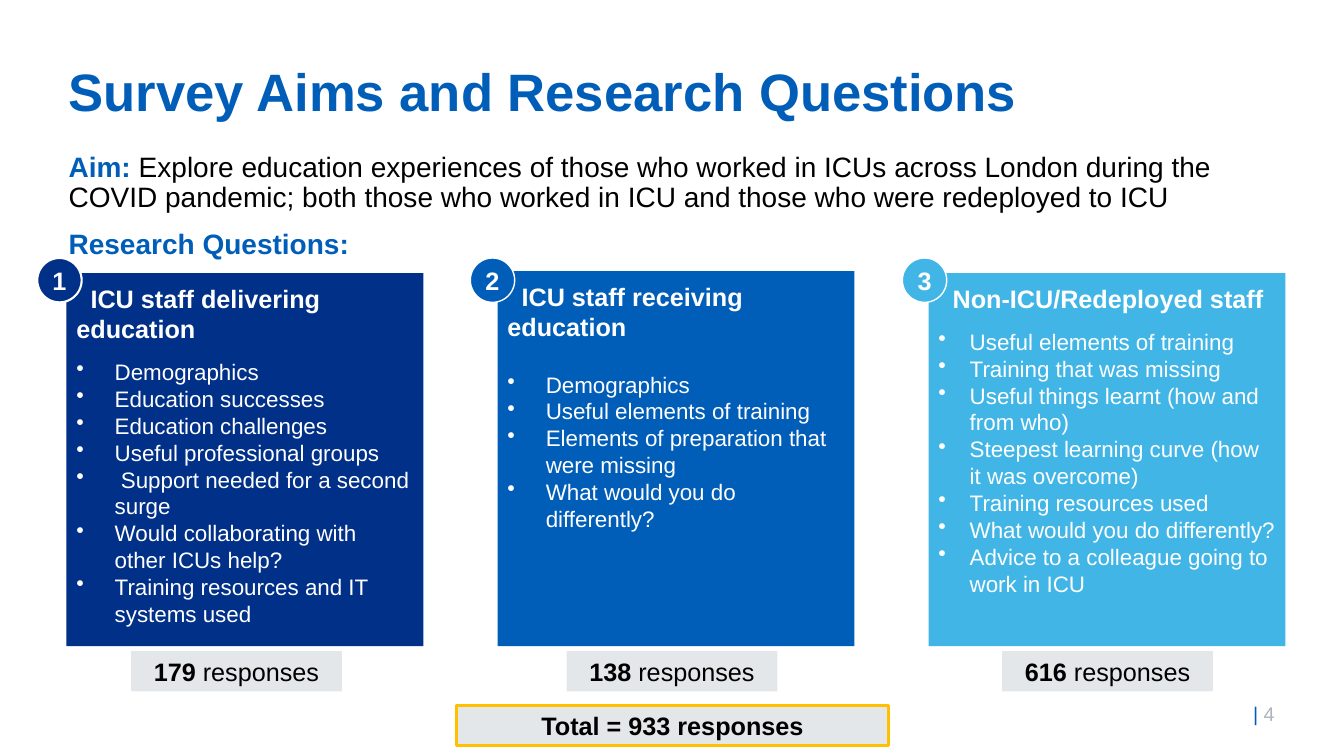
from lxml import etree
from pptx import Presentation
from pptx.dml.color import RGBColor
from pptx.enum.shapes import MSO_SHAPE
from pptx.enum.text import MSO_ANCHOR, MSO_AUTO_SIZE, PP_ALIGN
from pptx.oxml.ns import qn
from pptx.util import Inches, Pt

RECTANGLE, OVAL = MSO_SHAPE.RECTANGLE, MSO_SHAPE.OVAL
LEFT, CENTER = PP_ALIGN.LEFT, PP_ALIGN.CENTER
TOP, MIDDLE, BOTTOM = MSO_ANCHOR.TOP, MSO_ANCHOR.MIDDLE, MSO_ANCHOR.BOTTOM

NAVY, BLUE, SKY = "003087", "005EB8", "41B6E6"
WHITE, BLACK, PALE, GREY, GOLD = "FFFFFF", "000000", "E4E7E9", "ADB6BE", "FFC000"

CARD_WIDTH, CARD_BOTTOM = 3.54, 6.41
CARD_LEFT, CARD_PITCH = 0.66, 4.275
RESPONSE_LEFT, RESPONSE_PITCH = 1.3, 4.32

GROUPS = [
    dict(heading="ICU staff delivering education", color=NAVY, top=2.71, gap=10.35,
         indent=0.38, badge_offset=0.29, badge_line=1.5, responses="179", topics=[
             "Demographics", "Education successes", "Education challenges",
             "Useful professional groups", " Support needed for a second surge",
             "Would collaborating with other ICUs help?",
             "Training resources and IT systems used"]),
    dict(heading="ICU staff receiving education", color=BLUE, top=2.69, gap=20.7,
         indent=0.38, badge_offset=0.27, badge_line=1, responses="138", topics=[
             "Demographics", "Useful elements of training",
             "Elements of preparation that were missing",
             "What would you do differently?"]),
    dict(heading="Non-ICU/Redeployed staff", color=SKY, top=2.71, gap=10.35,
         indent=0.31, badge_offset=0.26, badge_line=1, responses="616", topics=[
             "Useful elements of training", "Training that was missing",
             "Useful things learnt (how and from who)",
             "Steepest learning curve (how it was overcome)",
             "Training resources used", "What would you do differently?",
             "Advice to a colleague going to work in ICU"]),
]


def rgb(color):
    return RGBColor.from_string(color)


def place(shape, box):
    shape.left, shape.top, shape.width, shape.height = map(Inches, box)


def prepare_frame(shape, anchor):
    frame = shape.text_frame
    frame.word_wrap = True
    frame.auto_size = MSO_AUTO_SIZE.NONE
    frame.vertical_anchor = anchor
    return frame


def write(paragraph, *runs, size=18, color=BLACK, bold=False, align=LEFT, bullet=None,
          margin=0, indent=0, before=0, after=0, spacing=1.0):
    """Fill a paragraph; each run is a string or (string, overrides of color and bold)."""
    properties = paragraph._p.get_or_add_pPr()
    properties.set("marL", str(Inches(margin)))
    properties.set("indent", str(Inches(indent)))
    if bullet:
        etree.SubElement(properties, qn("a:buChar")).set("char", bullet)
    else:
        etree.SubElement(properties, qn("a:buNone"))
    paragraph.alignment = align
    paragraph.space_before, paragraph.space_after = Pt(before), Pt(after)
    paragraph.line_spacing = spacing
    for item in runs:
        text, changes = (item, {}) if isinstance(item, str) else item
        run = paragraph.add_run()
        run.text = text
        run.font.name, run.font.size = "Arial", Pt(size)
        run.font.bold = changes.get("bold", bold)
        run.font.color.rgb = rgb(changes.get("color", color))


def add_block(slide, kind, box, fill, line=None, line_width=1):
    block = slide.shapes.add_shape(kind, *map(Inches, box))
    block.shadow.inherit = False
    block.fill.solid()
    block.fill.fore_color.rgb = rgb(fill)
    if line:
        block.line.color.rgb = rgb(line)
        block.line.width = Pt(line_width)
    else:
        block.line.fill.background()
    return block


def fill_title(slide, box):
    title = slide.shapes.title
    place(title, box)
    frame = prepare_frame(title, BOTTOM)
    write(frame.paragraphs[0], "Survey Aims and Research Questions",
          size=37.6, color=BLUE, bold=True, spacing=0.9)


def fill_aim(slide, box):
    body = slide.placeholders[1]
    place(body, box)
    frame = prepare_frame(body, TOP)
    label = dict(color=BLUE, bold=True)
    write(frame.paragraphs[0], ("Aim: ", label),
          "Explore education experiences of those who worked in ICUs across London during "
          "the COVID pandemic; both those who worked in ICU and those who were redeployed "
          "to ICU", size=20, after=12, spacing=0.9)
    write(frame.add_paragraph(), ("Research Questions:", label),
          size=20, after=12, spacing=0.9)


def add_card(slide, box, group):
    card = add_block(slide, RECTANGLE, box, group["color"])
    frame = prepare_frame(card, TOP)
    frame.margin_top = frame.margin_bottom = Inches(0.1)
    write(frame.paragraphs[0], group["heading"], color=WHITE, bold=True, indent=0.14)
    for position, topic in enumerate(group["topics"]):
        write(frame.add_paragraph(), topic, size=16, color=WHITE, bullet="•",
              margin=group["indent"], indent=-group["indent"],
              before=0 if position else group["gap"])


def add_badge(slide, box, number, group):
    badge = add_block(slide, OVAL, box, group["color"], WHITE, group["badge_line"])
    frame = prepare_frame(badge, MIDDLE)
    frame.margin_left = frame.margin_right = 0
    write(frame.paragraphs[0], str(number), color=WHITE, bold=True, align=CENTER)


def add_count(slide, box, *runs, **outline):
    count = add_block(slide, RECTANGLE, box, PALE, **outline)
    write(prepare_frame(count, TOP).paragraphs[0], *runs, align=CENTER)


def add_page_number(slide, box):
    page = slide.shapes.add_textbox(*map(Inches, box))
    write(prepare_frame(page, TOP).paragraphs[0], ("| ", dict(color=BLUE)), "4",
          size=14.1, color=GREY)


def main():
    deck = Presentation()
    deck.slide_width, deck.slide_height = Inches(13.33), Inches(7.5)
    slide = deck.slides.add_slide(deck.slide_layouts[1])
    add_page_number(slide, (12.33, 6.91, 0.94, 0.34))
    fill_aim(slide, (0.58, 1.47, 12.18, 5.43))
    fill_title(slide, (0.58, 0.6, 12.18, 0.67))
    for column, group in enumerate(GROUPS):
        left, top = CARD_LEFT + column * CARD_PITCH, group["top"]
        add_card(slide, (left, top, CARD_WIDTH, CARD_BOTTOM - top), group)
        add_badge(slide, (left - group["badge_offset"], 2.56, 0.44, 0.44),
                  column + 1, group)
        add_count(slide, (RESPONSE_LEFT + column * RESPONSE_PITCH, 6.46, 2.09, 0.4),
                  (group["responses"], dict(bold=True)), " responses")
    add_count(slide, (4.53, 7, 4.28, 0.4), ("Total = 933 responses", dict(bold=True)),
              line=GOLD, line_width=2.25)
    deck.save("out.pptx")


if __name__ == "__main__":
    main()
